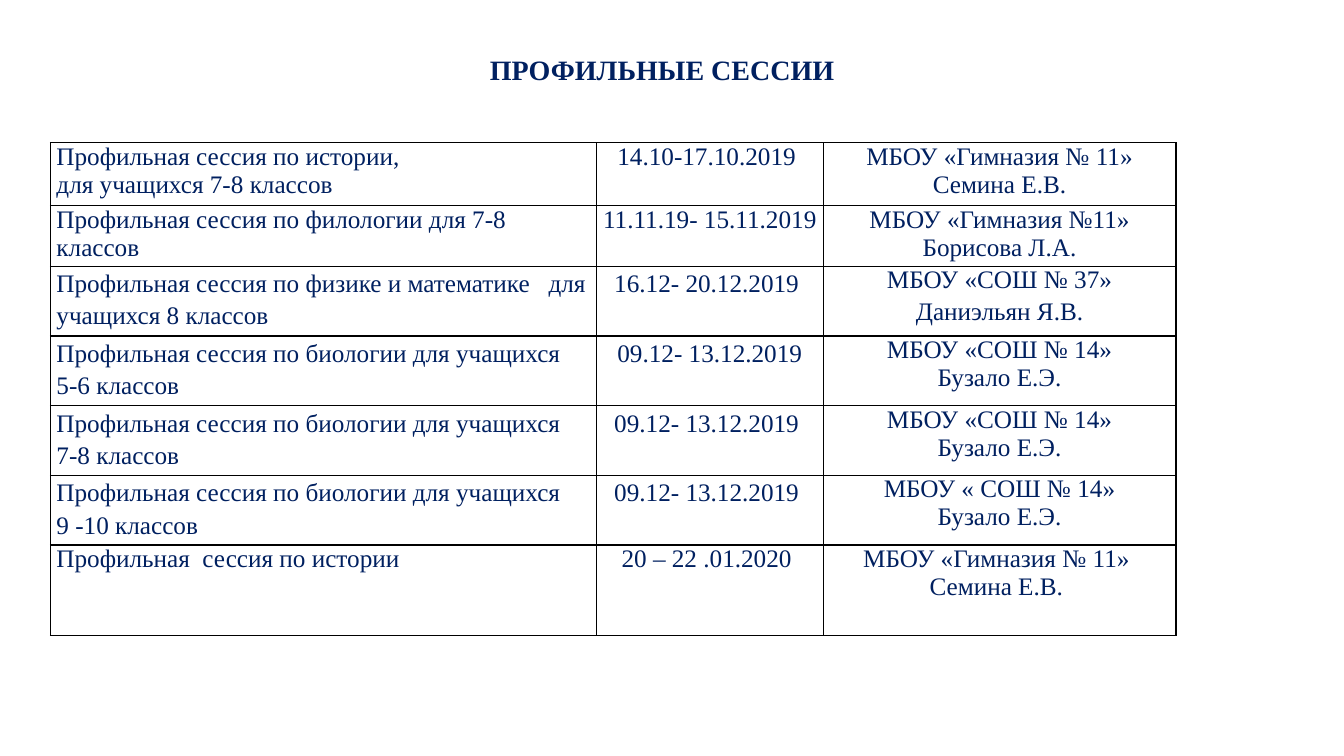
import lxml.etree
import pptx
import pptx.dml.color
import pptx.enum.text
import pptx.oxml.ns
import pptx.util

NAVY = pptx.dml.color.RGBColor(0x00, 0x20, 0x60)
BLACK = pptx.dml.color.RGBColor(0x00, 0x00, 0x00)
WHITE = pptx.dml.color.RGBColor(0xFF, 0xFF, 0xFF)
LEFT = pptx.enum.text.PP_ALIGN.LEFT
CENTER = pptx.enum.text.PP_ALIGN.CENTER
WIDTH, HEIGHT = pptx.util.Inches(13.33), pptx.util.Inches(7.5)
GRID_COLUMNS, GRID_ROWS = 160, 90

COLUMN_WIDTHS = [65, 27, 42]
COLUMN_ALIGNS = [LEFT, CENTER, CENTER]
ROW_HEIGHTS = [7.5, 7.2, 8.3, 8.3, 8.3, 8.3, 10.8]
LOOSE_ROWS = range(2, 6)
BIOLOGY = "Профильная сессия по биологии для учащихся"
SESSIONS = [
    (["Профильная сессия по истории,", "для учащихся 7-8 классов"],
     ["14.10-17.10.2019 "], ["МБОУ «Гимназия № 11»", "Семина Е.В."]),
    (["Профильная сессия по филологии для 7-8 классов"],
     ["11.11.19- 15.11.2019"], ["МБОУ «Гимназия №11»", "Борисова Л.А."]),
    (["Профильная сессия по физике и математике   для учащихся 8 классов"],
     ["16.12- 20.12.2019 "], ["МБОУ «СОШ № 37»", "Даниэльян Я.В."]),
    ([BIOLOGY, "5-6 классов"],
     ["09.12- 13.12.2019"], ["МБОУ «СОШ № 14»", "Бузало Е.Э."]),
    ([BIOLOGY, "7-8 классов"],
     ["09.12- 13.12.2019 "], ["МБОУ «СОШ № 14»", "Бузало Е.Э."]),
    ([BIOLOGY, "9 -10 классов"],
     ["09.12- 13.12.2019 "], ["МБОУ « СОШ № 14»", "Бузало Е.Э."]),
    (["Профильная  сессия по истории"],
     ["20 – 22 .01.2020 "], ["МБОУ «Гимназия № 11» ", "Семина Е.В. "]),
]


def across(columns):
    return round(WIDTH * columns / GRID_COLUMNS)


def down(rows):
    return round(HEIGHT * rows / GRID_ROWS)


def write(para, text, size=18, bold=False, align=LEFT, spacing=1.0):
    para.alignment = align
    para.line_spacing = spacing
    span = para.add_run()
    span.text = text
    span.font.name = "Times New Roman"
    span.font.size = pptx.util.Pt(size)
    span.font.bold = bold
    span.font.color.rgb = NAVY


class SessionPage:
    """Holds the page and its style, and adds each kind of element."""

    def __init__(self, deck):
        self.page = deck.slides.add_slide(deck.slide_layouts[5])
        self.border = pptx.util.Pt(1)
        self.padding = pptx.util.Inches(0.06)

    def title(self, text, left, top, width, height):
        box = self.page.shapes.title
        box.left, box.top = across(left), down(top)
        box.width, box.height = across(width), down(height)
        box.fill.solid()
        box.fill.fore_color.rgb = WHITE
        frame = box.text_frame
        frame.margin_left = frame.margin_right = 0
        frame.margin_top = frame.margin_bottom = 0
        frame.vertical_anchor = pptx.enum.text.MSO_ANCHOR.MIDDLE
        frame.word_wrap = True
        write(frame.paragraphs[0], text, size=20, bold=True, align=CENTER, spacing=0.9)

    def outline(self, cell):
        properties = cell._tc.get_or_add_tcPr()
        name = pptx.oxml.ns.qn
        for side in ("a:lnL", "a:lnR", "a:lnT", "a:lnB"):
            line = lxml.etree.SubElement(properties, name(side), w=str(self.border))
            fill = lxml.etree.SubElement(line, name("a:solidFill"))
            lxml.etree.SubElement(fill, name("a:srgbClr"), val=str(BLACK))

    def cell(self, cell, lines, align, spacings):
        self.outline(cell)
        cell.fill.background()
        cell.margin_left = cell.margin_right = self.padding
        cell.margin_top = cell.margin_bottom = 0
        frame = cell.text_frame
        for index, (line, spacing) in enumerate(zip(lines, spacings)):
            para = frame.add_paragraph() if index else frame.paragraphs[0]
            write(para, line, align=align, spacing=spacing)

    def table(self, sessions, left, top):
        table = self.page.shapes.add_table(
            len(sessions), len(COLUMN_WIDTHS), across(left), down(top),
            across(sum(COLUMN_WIDTHS)), down(sum(ROW_HEIGHTS))).table
        table.first_row = table.horz_banding = False
        for column, width in zip(table.columns, COLUMN_WIDTHS):
            column.width = across(width)
        for row, height in zip(table.rows, ROW_HEIGHTS):
            row.height = down(height)
        for row, session in enumerate(sessions):
            for column, lines in enumerate(session):
                loose = row in LOOSE_ROWS and column < 2
                spacings = [1.15 if loose else 1.0] * len(lines)
                if row == 2 and column == 2:
                    spacings[-1] = 1.15
                self.cell(table.cell(row, column), lines, COLUMN_ALIGNS[column], spacings)


def main():
    deck = pptx.Presentation()
    deck.slide_width, deck.slide_height = WIDTH, HEIGHT
    page = SessionPage(deck)
    page.title("ПРОФИЛЬНЫЕ СЕССИИ ", left=10, top=6.75, width=138.5, height=3.6)
    page.table(SESSIONS, left=6, top=17)
    deck.save("out.pptx")


if __name__ == "__main__":
    main()
